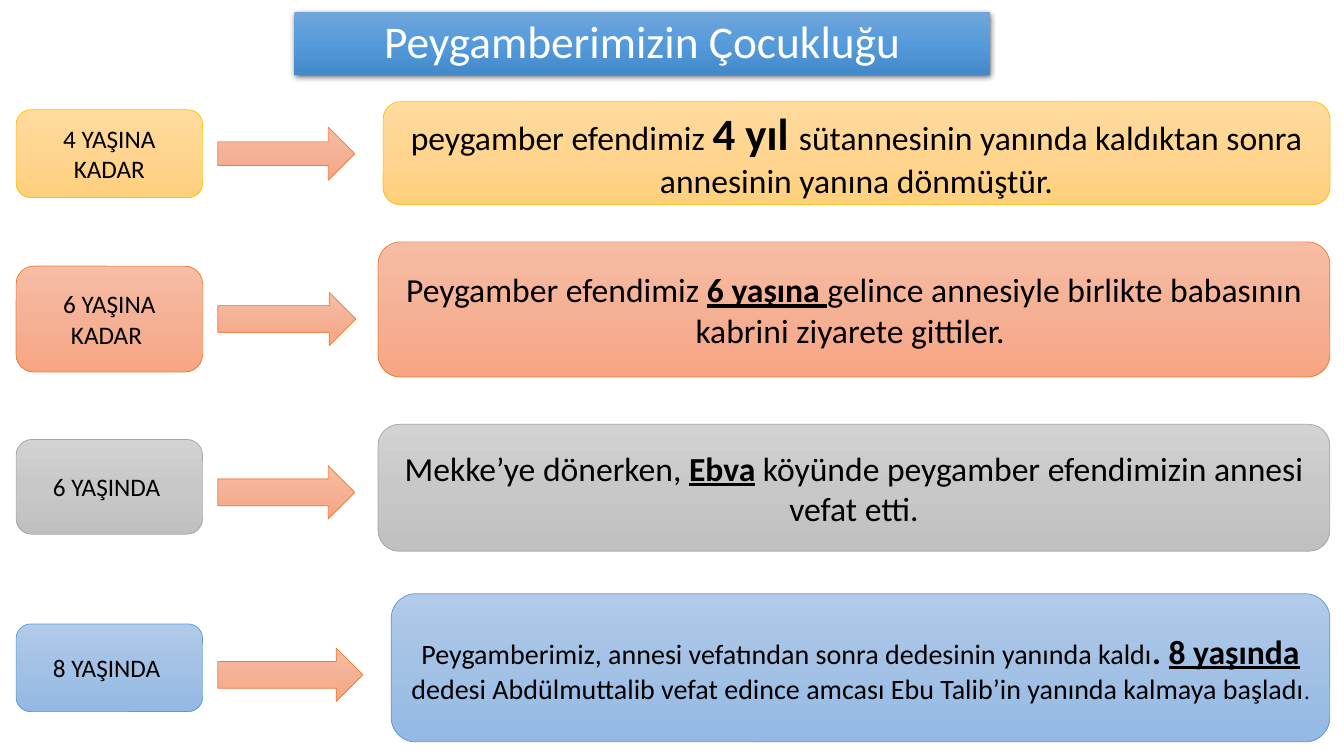
from copy import deepcopy
from dataclasses import dataclass

from lxml import etree
from pptx import Presentation
from pptx import util as u
from pptx.dml.color import RGBColor
from pptx.enum import shapes, text
from pptx.oxml import ns

FONT = "Calibri"
LABEL_LEFT, LABEL_WIDTH = 0.16, 1.85
ARROW_LEFT, ARROW_HEIGHT = 2.16, 0.53
DETAIL_RIGHT = 13.19


@dataclass(frozen=True)
class Palette:
    stops: tuple[str, str, str]
    line: str | None = None


@dataclass(frozen=True)
class Span:
    words: str
    size: float = 24
    bold: bool = False
    underline: bool = False


@dataclass(frozen=True)
class Stage:
    palette: Palette
    label: str
    label_top: float
    label_height: float
    arrow_top: float
    arrow_width: float
    detail_left: float
    detail_top: float
    detail_height: float
    spans: tuple[Span, ...]
    arrow_shaft: float = 0.5


TITLE = Palette(("71A6DB", "559BDB", "448ACA"))
GOLD = Palette(("FFDB9E", "FFD590", "FFD07C"), "FFC000")
ORANGE = Palette(("F7BDA5", "F5B196", "F8A582"), "ED7D31")
GRAY = Palette(("D2D2D2", "C8C8C8", "C0C0C0"), "A5A5A5")
BLUE = Palette(("B1CBE9", "A3C1E5", "93B9E4"), "5B9BD5")

STAGES = (
    Stage(GOLD, "4 YAŞINA KADAR", 1.09, 0.87, 1.26, 1.36, 3.8, 1.01, 1.02, (
        Span("peygamber efendimiz "),
        Span("4 yıl ", 32, bold=True),
        Span("sütannesinin yanında kaldıktan sonra annesinin yanına dönmüştür."),
    ), arrow_shaft=0.44),
    Stage(ORANGE, "6 YAŞINA KADAR ", 2.64, 1.05, 2.9, 1.37, 3.75, 2.4, 1.34, (
        Span("Peygamber efendimiz "),
        Span("6 yaşına ", bold=True, underline=True),
        Span("gelince annesiyle birlikte babasının kabrini ziyarete gittiler. "),
    )),
    Stage(GRAY, "6 YAŞINDA ", 4.36, 0.94, 4.62, 1.36, 3.75, 4.21, 1.26, (
        Span("Mekke’ye dönerken, "),
        Span("Ebva", bold=True, underline=True),
        Span(" köyünde peygamber efendimizin annesi vefat etti."),
    )),
    Stage(BLUE, "8 YAŞINDA ", 6.19, 0.87, 6.43, 1.44, 3.88, 5.89, 1.47, (
        Span("Peygamberimiz, annesi vefatından sonra dedesinin yanında kaldı", 20),
        Span(". ", bold=True),
        Span("8 yaşında ", bold=True, underline=True),
        Span("dedesi Abdülmuttalib vefat edince amcası Ebu Talib’in yanında kalmaya başladı", 20),
        Span(".", 16),
    )),
)


def color(value: str) -> RGBColor:
    return RGBColor.from_string(value)


def add_box(page, kind, left: float, top: float, width: float, height: float,
            palette: Palette):
    box = page.shapes.add_shape(
        kind, u.Inches(left), u.Inches(top), u.Inches(width), u.Inches(height))
    box.shadow.inherit = False
    box.fill.gradient()
    box.fill.gradient_angle = 270
    stop_list = box._element.spPr.find(".//" + ns.qn("a:gsLst"))
    stop_list.insert(1, deepcopy(stop_list[0]))
    for index, stop in enumerate(box.fill.gradient_stops):
        stop.position = index / 2
        stop.color.rgb = color(palette.stops[index])
    if palette.line:
        box.line.color.rgb = color(palette.line)
        box.line.width = u.Pt(0.5)
    else:
        box.line.fill.background()
    return box


def add_span(para, words: str, *, size: float, bold: bool = False,
             underline: bool = False, ink: str = "000000") -> None:
    span = para.add_run()
    span.text = words
    span.font.name = FONT
    span.font.size = u.Pt(size)
    span.font.bold = bold
    span.font.underline = underline
    span.font.color.rgb = color(ink)


def center_text(box):
    frame = box.text_frame
    frame.word_wrap = True
    frame.vertical_anchor = text.MSO_ANCHOR.MIDDLE
    para = frame.paragraphs[0]
    para.alignment = text.PP_ALIGN.CENTER
    return para


def add_shadow(box) -> None:
    effects = box._element.spPr.find(ns.qn("a:effectLst"))
    shadow = etree.SubElement(
        effects, ns.qn("a:outerShdw"), blurRad=str(u.Pt(4.5)),
        dist=str(u.Pt(1.5)), dir="5400000", algn="ctr", rotWithShape="0")
    tint = etree.SubElement(shadow, ns.qn("a:srgbClr"), val="000000")
    etree.SubElement(tint, ns.qn("a:alpha"), val="63000")


def add_title(page) -> None:
    box = add_box(page, shapes.MSO_SHAPE.RECTANGLE, 2.92, 0.12, 6.9, 0.62, TITLE)
    add_shadow(box)
    para = center_text(box)
    para.line_spacing = 0.9
    add_span(para, "Peygamberimizin Çocukluğu", size=32.4, ink="FFFFFF")


def add_stage(page, stage: Stage) -> None:
    rounded = shapes.MSO_SHAPE.ROUNDED_RECTANGLE
    detail = add_box(page, rounded, stage.detail_left, stage.detail_top,
                     DETAIL_RIGHT - stage.detail_left, stage.detail_height,
                     stage.palette)
    para = center_text(detail)
    for span in stage.spans:
        add_span(para, span.words, size=span.size, bold=span.bold,
                 underline=span.underline)

    label = add_box(page, rounded, LABEL_LEFT, stage.label_top, LABEL_WIDTH,
                    stage.label_height, stage.palette)
    add_span(center_text(label), stage.label, size=18)

    arrow = add_box(page, shapes.MSO_SHAPE.RIGHT_ARROW, ARROW_LEFT,
                    stage.arrow_top, stage.arrow_width, ARROW_HEIGHT, ORANGE)
    arrow.adjustments[0] = stage.arrow_shaft


def main() -> None:
    deck = Presentation()
    deck.slide_width = u.Inches(13.33)
    deck.slide_height = u.Inches(7.5)
    page = deck.slides.add_slide(deck.slide_layouts[6])
    for stage in STAGES:
        add_stage(page, stage)
    add_title(page)
    deck.save("out.pptx")


if __name__ == "__main__":
    main()
